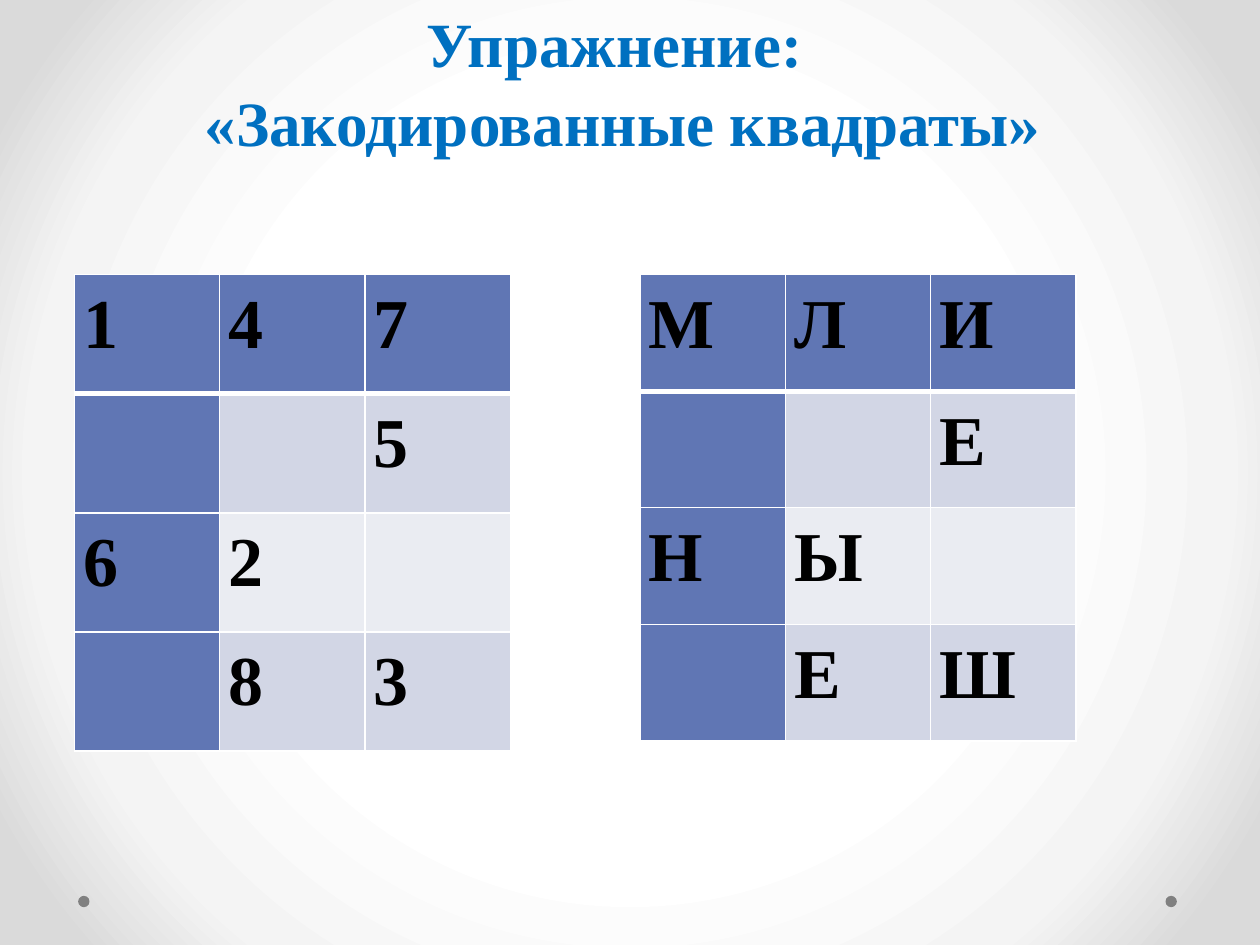
from pptx import Presentation
from pptx.dml.color import RGBColor
from pptx.enum.shapes import MSO_SHAPE as Shape
from pptx.enum.text import MSO_ANCHOR as Anchor, PP_ALIGN as Align
from pptx.oxml import parse_xml
from pptx.oxml.ns import nsdecls
from pptx.util import Inches, Pt

COLORS = {
    "title": "0070C0", "text": "000000", "dot": "808080",
    "header": "6076B4", "band": "D2D6E5", "light": "EAECF2", "border": "FFFFFF",
}
BACKGROUND_STOPS = [(50, "FFFFFF"), (76, "F4F4F4"), (92, "DADADA")]
FONT = "Times New Roman"

NUMBERS = [["1", "4", "7"], ["", "", "5"], ["6", "2", ""], ["", "8", "3"]]
LETTERS = [["М", "Л", "И"], ["", "", "Е"], ["Н", "Ы", ""], ["", "Е", "Ш"]]


def color(name):
    return RGBColor.from_string(COLORS[name])


def write(para, text, size, ink="text", align=Align.JUSTIFY, spacing=1.15):
    """Fill a paragraph with bold text; a newline becomes a line break."""
    para.alignment = align
    para.line_spacing = spacing
    for number, line in enumerate(text.split("\n")):
        if number:
            para.add_line_break()
        span = para.add_run()
        span.text = line
        span.font.name = FONT
        span.font.size = Pt(size)
        span.font.bold = True
        span.font.color.rgb = color(ink)


def paint_background(page):
    stops = "".join(
        f'<a:gs pos="{pos * 1000}"><a:srgbClr val="{tone}"/></a:gs>'
        for pos, tone in BACKGROUND_STOPS)
    page._element.cSld.insert(0, parse_xml(
        f'<p:bg {nsdecls("p", "a")}><p:bgPr><a:gradFill><a:gsLst>{stops}</a:gsLst>'
        '<a:path path="circle"><a:fillToRect l="50000" t="50000" r="50000" b="50000"/>'
        '</a:path></a:gradFill><a:effectLst/></p:bgPr></p:bg>'))


def add_dot(page, left, top, size):
    dot = page.shapes.add_shape(
        Shape.OVAL, Inches(left), Inches(top), Inches(size), Inches(size))
    dot.shadow.inherit = False
    dot.fill.solid()
    dot.fill.fore_color.rgb = color("dot")
    dot.line.fill.background()


def add_title(page, text, left, top, width, height):
    box = page.shapes.add_textbox(
        Inches(left), Inches(top), Inches(width), Inches(height))
    frame = box.text_frame
    frame.word_wrap = True
    frame.vertical_anchor = Anchor.BOTTOM
    write(frame.paragraphs[0], text, 36, ink="title", align=Align.CENTER, spacing=1.04)


def set_borders(cell, **widths):
    """Draw the cell's sides, given in schema order L, R, T, B."""
    properties = cell._tc.get_or_add_tcPr()
    for place, (side, width) in enumerate(widths.items()):
        properties.insert(place, parse_xml(
            f'<a:ln{side} {nsdecls("a")} w="{Pt(width)}"><a:solidFill>'
            f'<a:srgbClr val="{COLORS["border"]}"/></a:solidFill></a:ln{side}>'))


def add_square(page, rows, left, top, width, height):
    """Place a coded square with a dark first row and first column."""
    row_count, column_count = len(rows), len(rows[0])
    table = page.shapes.add_table(
        row_count, column_count,
        Inches(left), Inches(top), Inches(width), Inches(height)).table
    table.first_col = True
    for column in table.columns:
        column.width = Inches(width / column_count)
    for r, row in enumerate(rows):
        table.rows[r].height = Inches(height / row_count)
        for c, text in enumerate(row):
            cell = table.cell(r, c)
            tone = "header" if r == 0 or c == 0 else "band" if r % 2 else "light"
            cell.fill.solid()
            cell.fill.fore_color.rgb = color(tone)
            set_borders(cell, L=1, R=1, T=3 if r == 1 else 1, B=3 if r == 0 else 1)
            if text:
                cell.margin_left = cell.margin_right = Inches(0.07)
                cell.margin_top = cell.margin_bottom = 0
                write(cell.text_frame.paragraphs[0], text, 40)


def main():
    deck = Presentation()
    deck.slide_width, deck.slide_height = Inches(10), Inches(7.5)
    page = deck.slides.add_slide(deck.slide_layouts[6])

    # Backdrop with a dot in each lower corner
    paint_background(page)
    for left in (9.25, 0.62):
        add_dot(page, left, 7.11, 0.09)

    # Title and the two squares
    add_title(page, "Упражнение: \n«Закодированные квадраты»", 0, 0.13, 9.88, 1.18)
    add_square(page, NUMBERS, 0.59, 2.18, 3.46, 3.78)
    add_square(page, LETTERS, 5.08, 2.18, 3.46, 3.7)

    deck.save("out.pptx")


if __name__ == "__main__":
    main()
